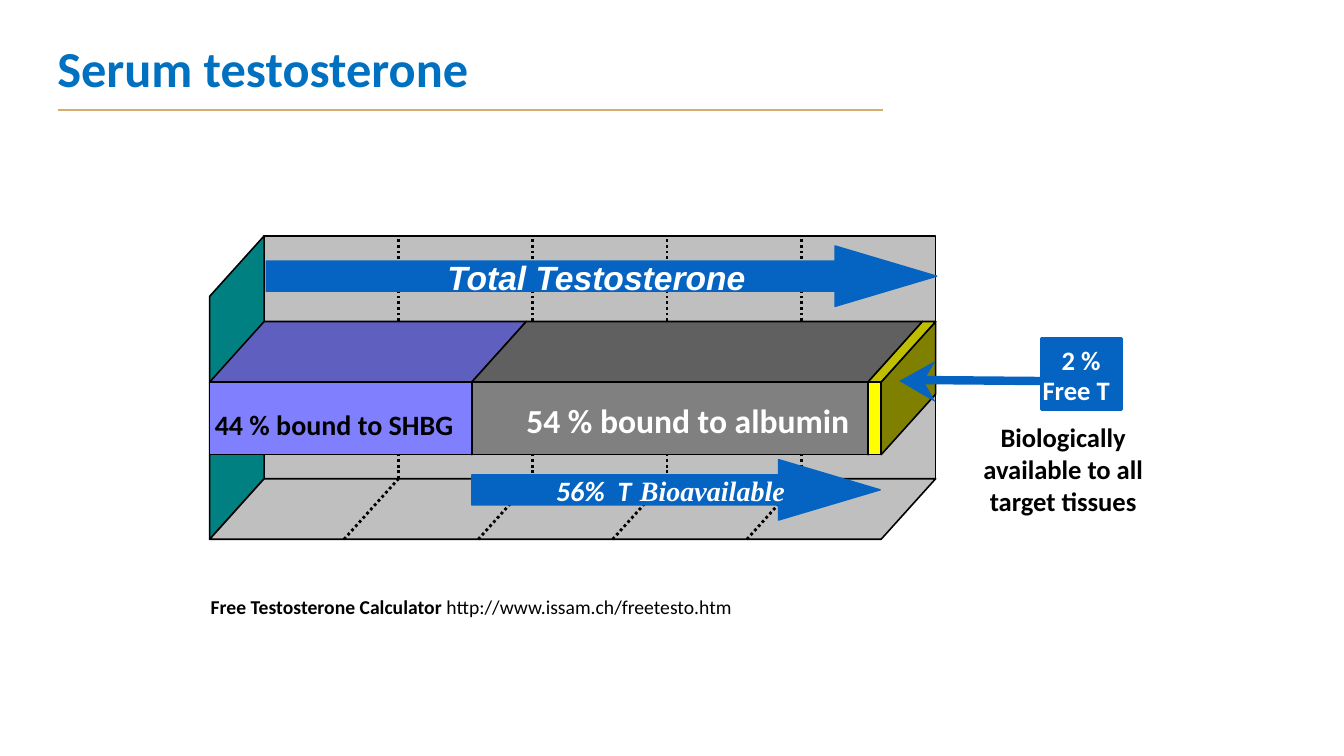
import lxml.etree
import pptx
import pptx.dml.color
import pptx.enum.dml
import pptx.enum.shapes
import pptx.enum.text
import pptx.oxml.ns
import pptx.util
from dataclasses import dataclass

Inches = pptx.util.Inches
Pt = pptx.util.Pt
SHAPE = pptx.enum.shapes.MSO_SHAPE
ALIGN = pptx.enum.text.PP_ALIGN


@dataclass(frozen=True)
class Theme:
    font: str = "Calibri"
    title: str = "0070C0"
    rule: str = "D6AC6F"
    accent: str = "0563C1"
    black: str = "000000"
    white: str = "FFFFFF"
    wall: str = "BFBFBF"
    end_wall: str = "008080"
    title_size: int = 36
    large: int = 24
    medium: int = 20
    label: int = 19
    small: int = 14
    outline: float = 1.13


class SlideBuilder:
    def __init__(self, slide, theme):
        self.shapes = slide.shapes
        self.theme = theme

    def paint(self, shape, fill, line, width):
        shape.shadow.inherit = False
        shape.fill.solid()
        shape.fill.fore_color.rgb = pptx.dml.color.RGBColor.from_string(fill)
        if line is None:
            shape.line.fill.background()
        else:
            shape.line.color.rgb = pptx.dml.color.RGBColor.from_string(line)
            shape.line.width = Pt(width)

    def block(self, kind, left, top, width, height, fill, line, line_width):
        shape = self.shapes.add_shape(
            kind, Inches(left), Inches(top), Inches(width), Inches(height))
        self.paint(shape, fill, line, line_width)
        return shape

    def arrow(self, left, top, width, height):
        shape = self.block(SHAPE.RIGHT_ARROW, left, top, width, height,
                           self.theme.accent, self.theme.accent, 1)
        shape.adjustments[0] = 0.5
        shape.adjustments[1] = 1.68

    def polygon(self, points, fill, line=None):
        corners = [(Inches(x), Inches(y)) for x, y in points]
        builder = self.shapes.build_freeform(*corners[0], scale=1.0)
        builder.add_line_segments(corners[1:], close=True)
        self.paint(builder.convert_to_shape(), fill, line, self.theme.outline)

    def line(self, start, end, color, width, dotted=False):
        connector = self.shapes.add_connector(
            pptx.enum.shapes.MSO_CONNECTOR.STRAIGHT,
            *(Inches(value) for value in start + end))
        connector.line.color.rgb = pptx.dml.color.RGBColor.from_string(color)
        connector.line.width = Pt(width)
        if dotted:
            connector.line.dash_style = pptx.enum.dml.MSO_LINE.ROUND_DOT
        lxml.etree.SubElement(connector._element.spPr,
                              pptx.oxml.ns.qn("a:effectLst"))

    def text(self, place, spans, color, align=ALIGN.LEFT, wrap=True, inset=(0, 0)):
        """Add one paragraph; spans are (text, size, font overrides)."""
        box = self.shapes.add_textbox(*(Inches(value) for value in place))
        across, down = (Inches(value) for value in inset)
        frame_format = {"word_wrap": wrap, "margin_left": across,
                        "margin_right": across, "margin_top": down,
                        "margin_bottom": down}
        for name, value in frame_format.items():
            setattr(box.text_frame, name, value)
        para = box.text_frame.paragraphs[0]
        para.alignment = align
        for words, size, overrides in spans:
            span = para.add_run()
            span.text = words
            font_format = {"name": self.theme.font, "size": Pt(size),
                           "bold": True, "italic": False} | overrides
            for name, value in font_format.items():
                setattr(span.font, name, value)
            span.font.color.rgb = pptx.dml.color.RGBColor.from_string(color)


def draw_box_chart(page):
    """Draw the open box, its grid and the three stacked bar segments."""
    theme = page.theme
    left, right = 2.08, 8.74
    depth_x, depth_y = 0.54, 0.6
    back_top, back_bottom = 2.34, 4.75
    bar_top, bar_bottom = 3.79, 4.51
    back_left, back_right = left + depth_x, right + depth_x
    front_bottom = back_bottom + depth_y

    back = [(back_left, back_top), (back_right, back_top),
            (back_right, back_bottom), (back_left, back_bottom)]
    end = [(back_left, back_bottom), (left, front_bottom),
           (left, back_top + depth_y), (back_left, back_top)]
    floor = [(back_left, back_bottom), (back_right, back_bottom),
             (right, front_bottom), (left, front_bottom)]
    for face, fill in ((back, theme.wall), (end, theme.end_wall), (floor, theme.wall)):
        page.polygon(face, fill, theme.black)

    divisions = 5
    for index in range(1, divisions):
        x = left + index * (right - left) / divisions
        bend = (x + depth_x, back_bottom)
        page.line(bend, (x + depth_x, back_top), theme.black, 0, dotted=True)
        page.line((x, front_bottom), bend, theme.black, 0, dotted=True)

    segments = [  # start, end, front, top, side
        (left, 4.68, "8080FF", "5F5FBF", "3F3F7F"),
        (4.68, 8.61, "808080", "606060", "404040"),
        (8.61, right, "FFFF00", "BFBF00", "7F7F00"),
    ]
    for start, stop, front_fill, top_fill, side_fill in segments:
        far_top = bar_top - depth_y
        page.polygon([(stop, bar_top), (stop, bar_bottom),
                      (stop + depth_x, bar_bottom - depth_y),
                      (stop + depth_x, far_top)], side_fill, theme.black)
        page.polygon([(start, bar_top), (stop, bar_top), (stop + depth_x, far_top),
                      (start + depth_x, far_top)], top_fill, theme.black)
        page.block(SHAPE.RECTANGLE, start, bar_top, stop - start,
                   bar_bottom - bar_top, front_fill, theme.black, theme.outline)


def main():
    deck = pptx.Presentation()
    deck.slide_width, deck.slide_height = Inches(13.33), Inches(7.5)
    theme = Theme()
    page = SlideBuilder(deck.slides.add_slide(deck.slide_layouts[6]), theme)

    page.text((0.47, 0.32, 10.84, 0.71),
              [("Serum testosterone", theme.title_size, {})],
              theme.title, inset=(0.1, 0.05))
    page.line((0.58, 1.09), (8.76, 1.09), theme.rule, 1)

    draw_box_chart(page)

    page.block(SHAPE.RECTANGLE, 10.33, 3.36, 0.79, 0.7,
               theme.accent, theme.accent, 2.25)
    labels = [
        ((2.13, 4.04, 2.39, 0.34), "44 % bound to SHBG", theme.medium, theme.black),
        ((5.22, 3.97, 3.23, 0.4), "54 % bound to albumin", theme.large, theme.white),
        ((10.53, 3.41, 0.39, 0.32), "2 %", theme.label, theme.white),
        ((10.34, 3.71, 0.68, 0.32), "Free T", theme.label, theme.white),
    ]
    for place, words, size, color in labels:
        page.text(place, [(words, size, {})], color, wrap=False)

    page.line((10.33, 3.78), (9.08, 3.77), theme.accent, 6)
    page.polygon([(9.28, 3.99), (8.92, 3.78), (9.28, 3.58), (9.16, 3.78)],
                 theme.accent)

    italic = {"italic": True}
    serif = italic | {"name": "Times New Roman"}
    page.arrow(4.68, 4.56, 4.05, 0.6)
    page.text((5.41, 4.59, 2.48, 0.5),
              [("56%  T", theme.medium, italic), (" ", theme.large, serif),
               ("Bioavailable", theme.medium, serif)],
              theme.white, ALIGN.CENTER, wrap=False, inset=(0.1, 0.05))
    page.arrow(2.64, 2.44, 6.65, 0.6)
    page.text((4.09, 2.5, 3.65, 0.5),
              [("Total Testosterone", theme.large, italic | {"name": "Arial"})],
              theme.white, ALIGN.CENTER, inset=(0.1, 0.05))

    page.text((9.66, 4.18, 1.77, 0.96),
              [("Biologically available to all target tissues", theme.label, {})],
              theme.black, ALIGN.CENTER)
    page.text((2.09, 5.9, 8.33, 0.24),
              [("Free Testosterone Calculator", theme.small, {}),
               (" http://www.issam.ch/freetesto.htm", theme.small, {"bold": False})],
              theme.black)
    deck.save("out.pptx")


if __name__ == "__main__":
    main()
